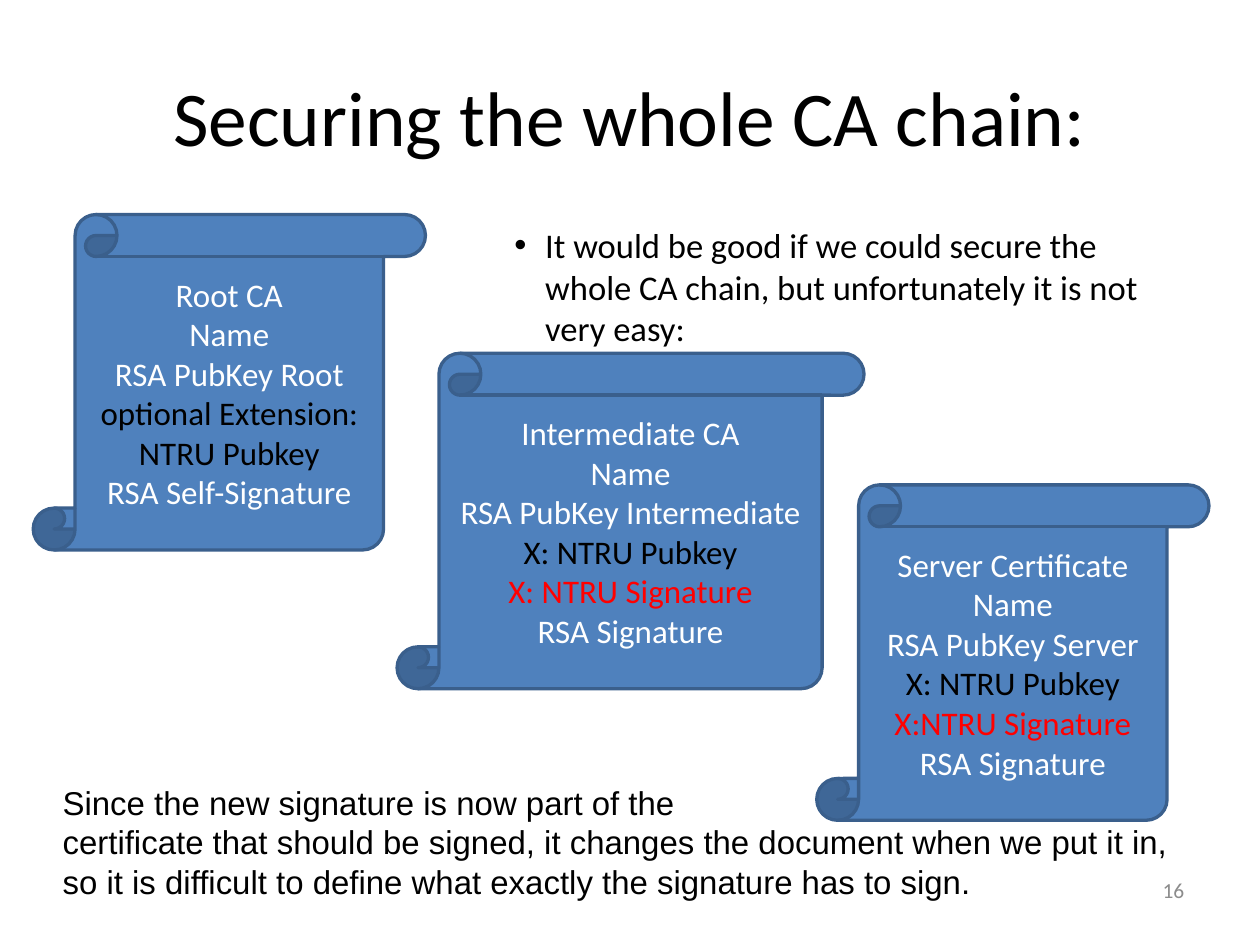
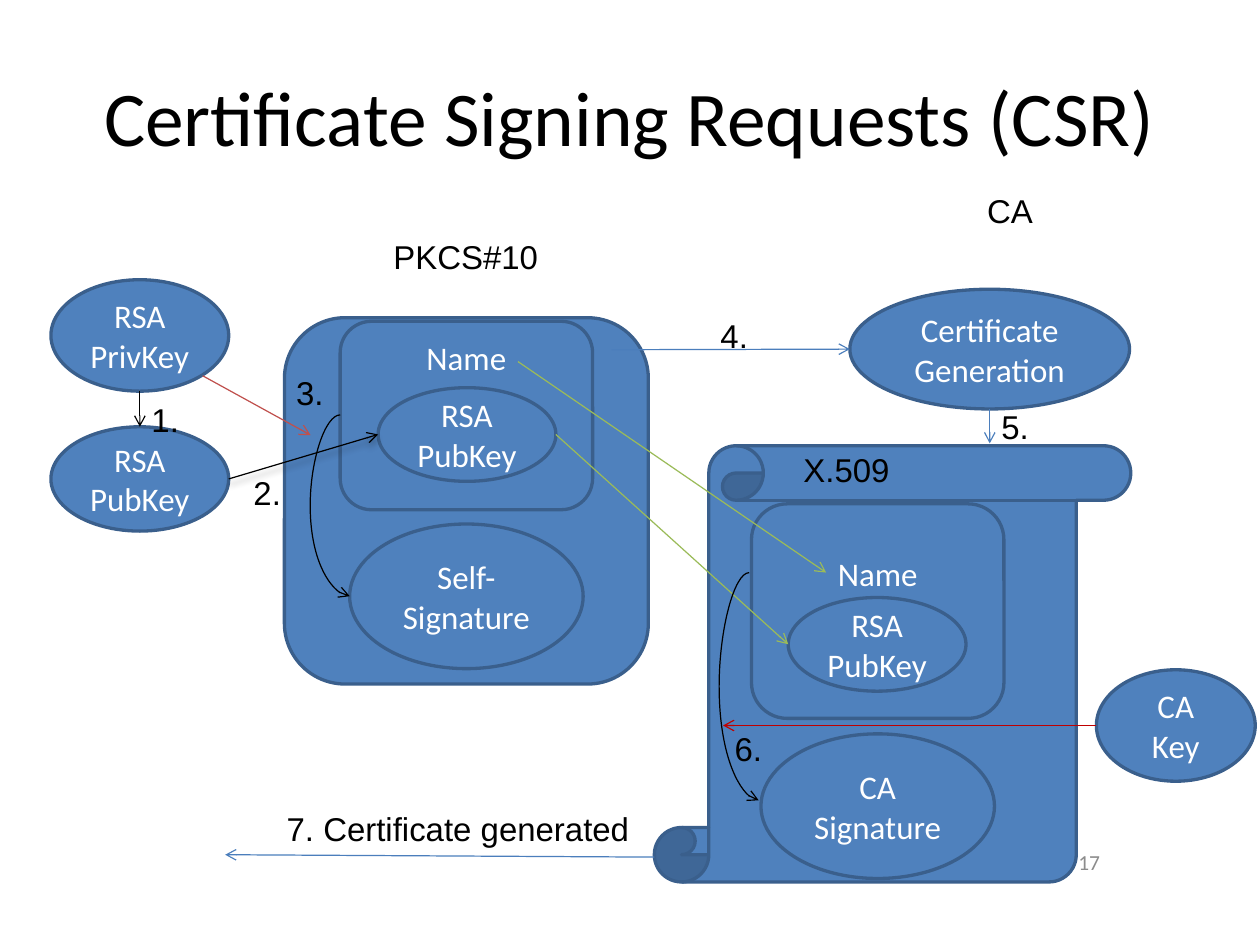
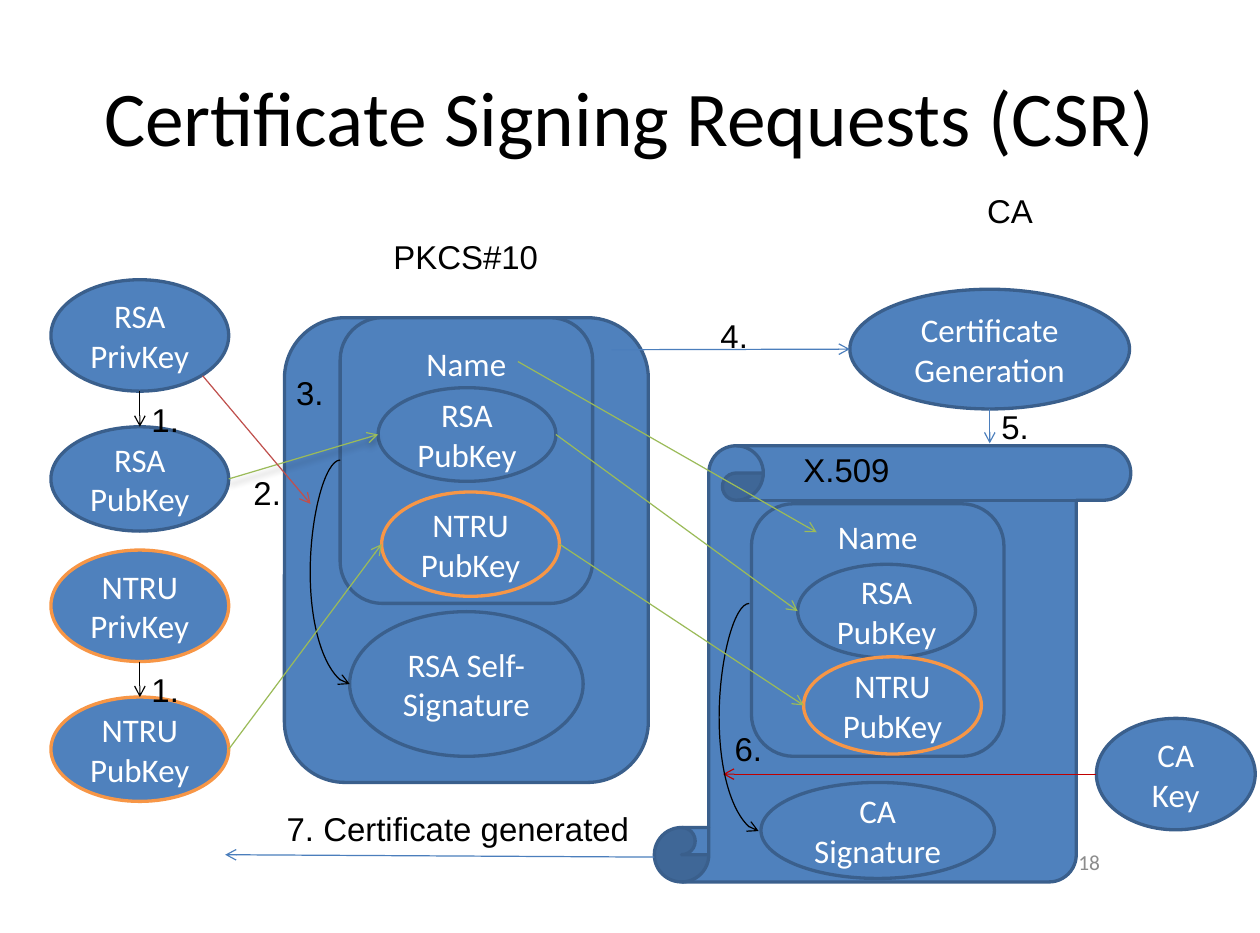
from dataclasses import dataclass
from typing import NamedTuple

from lxml.etree import SubElement
from pptx import Presentation
from pptx.dml.color import RGBColor
from pptx.enum.shapes import MSO_CONNECTOR, MSO_SHAPE
from pptx.enum.text import MSO_ANCHOR, MSO_AUTO_SIZE, PP_ALIGN
from pptx.oxml.ns import qn
from pptx.util import Inches, Pt

COLORS = {
    "black": "000000",
    "white": "FFFFFF",
    "red": "FF0000",
    "gray": "8C8C8C",
    "blue": "4F81BD",
    "blue outline": "3A5F8C",
    "blue line": "4B7EBC",
    "orange": "F79646",
    "green": "9BBB59",
    "brick": "C0504D",
    "dark red": "C00000",
}
TITLE_ONLY, TITLE_AND_BODY = 5, 1


class Point(NamedTuple):
    x: float
    y: float


class Box(NamedTuple):
    left: float
    top: float
    width: float
    height: float

    def at(self, across: float, down: float) -> Point:
        """Point at the given fractions of the width and height."""
        return Point(self.left + across * self.width, self.top + down * self.height)

    @property
    def left_mid(self) -> Point:
        return self.at(0, 0.5)

    @property
    def right_mid(self) -> Point:
        return self.at(1, 0.5)

    @property
    def top_mid(self) -> Point:
        return self.at(0.5, 0)

    @property
    def bottom_mid(self) -> Point:
        return self.at(0.5, 1)

    def emu(self) -> list[int]:
        return [Inches(value) for value in self]


class Line(NamedTuple):
    text: str
    color: str = "white"


class Label(NamedTuple):
    text: str
    left: float
    top: float
    width: float = 0.44


class Certificate(NamedTuple):
    box: Box
    lines: list[Line]


@dataclass
class CsrSlide:
    number: int
    request: Box
    request_info: Box
    request_name_gap: float
    self_signature: Box
    self_signature_text: str
    signing_end: Point
    request_loop_start: Point
    cert_info: Box
    cert_name_gap: float
    cert_key: Box
    cert_signature: Box
    cert_loop: tuple[Point, Point]
    ca_key: Box
    name_end: Point
    rsa_line: str
    with_ntru: bool = False


def rgb(name: str) -> RGBColor:
    return RGBColor.from_string(COLORS[name])


def write(frame, lines, *, font="Calibri", size=20, color="white",
          align=PP_ALIGN.CENTER, anchor=MSO_ANCHOR.MIDDLE, wrap=True,
          auto_size=MSO_AUTO_SIZE.NONE, side=0.1, top=0.05) -> None:
    """Fill a frame with one line or a list of Lines, one paragraph each."""
    if isinstance(lines, str):
        lines = [Line(lines, color)]
    frame.word_wrap = wrap
    frame.auto_size = auto_size
    frame.vertical_anchor = anchor
    frame.margin_left = frame.margin_right = Inches(side)
    frame.margin_top, frame.margin_bottom = Inches(top), Inches(0.05)
    for index, line in enumerate(lines):
        paragraph = frame.add_paragraph() if index else frame.paragraphs[0]
        paragraph.alignment = align
        run = paragraph.add_run()
        run.text = line.text
        run.font.name = font
        run.font.size = Pt(size)
        run.font.color.rgb = rgb(line.color)


def place(shape, box: Box) -> None:
    shape.left, shape.top, shape.width, shape.height = box.emu()


def add_node(slide, kind, box: Box, lines=(), outline="blue outline", **text_format) -> None:
    node = slide.shapes.add_shape(kind, *box.emu())
    node.shadow.inherit = False
    node.fill.solid()
    node.fill.fore_color.rgb = rgb("blue")
    node.line.color.rgb = rgb(outline)
    node.line.width = Pt(2)
    if lines:
        write(node.text_frame, lines, **text_format)


def add_ellipse(slide, box: Box, text: str, outline="blue outline") -> None:
    add_node(slide, MSO_SHAPE.OVAL, box, text, outline)


def add_name_panel(slide, box: Box, gap: float) -> None:
    add_node(slide, MSO_SHAPE.ROUNDED_RECTANGLE, box, "Name",
             anchor=MSO_ANCHOR.TOP, top=gap)


def add_label(slide, box: Box, lines) -> None:
    label = slide.shapes.add_textbox(*box.emu())
    write(label.text_frame, lines, font="Arial", color="black", align=PP_ALIGN.LEFT,
          anchor=MSO_ANCHOR.TOP, wrap=False, auto_size=MSO_AUTO_SIZE.SHAPE_TO_FIT_TEXT)


def add_arrow(slide, start: Point, end: Point, color: str,
              kind=MSO_CONNECTOR.STRAIGHT, shadow=False):
    arrow = slide.shapes.add_connector(
        kind, *(Inches(value) for value in (*start, *end)))
    arrow.line.color.rgb = rgb(color)
    arrow.line.width = Pt(0.75)
    properties = arrow.element.spPr
    SubElement(properties.find(qn("a:ln")), qn("a:tailEnd"), type="arrow")
    effects = SubElement(properties, qn("a:effectLst"))
    if shadow:
        outer = SubElement(effects, qn("a:outerShdw"), blurRad=str(Pt(4)),
                           dist=str(Pt(3)), dir="5400000", rotWithShape="0")
        tint = SubElement(outer, qn("a:srgbClr"), val=COLORS["black"])
        SubElement(tint, qn("a:alpha"), val="40000")
    return arrow


def add_loop(slide, start: Point, end: Point) -> None:
    """Curved arrow that bulges out to the left of both its ends."""
    loop = add_arrow(slide, start, end, "black", MSO_CONNECTOR.CURVE)
    properties = loop.element.spPr
    frame = properties.find(qn("a:xfrm"))
    for key, value in (("rot", "10800000"), ("flipH", "1"), ("flipV", "1")):
        frame.set(key, value)
    geometry = properties.find(qn("a:prstGeom"))
    adjustments = geometry.find(qn("a:avLst"))
    if adjustments is None:
        adjustments = SubElement(geometry, qn("a:avLst"))
    SubElement(adjustments, qn("a:gd"), name="adj1", fmla="val -317500")


def add_slide(deck, layout: int, title: str, number: int, number_box: Box):
    slide = deck.slides.add_slide(deck.slide_layouts[layout])
    place(slide.shapes.title, Box(0.53, 0.32, 9.57, 1.31))
    write(slide.shapes.title.text_frame, title, size=47, color="black", side=0.11)
    page_number = slide.shapes.add_textbox(*number_box.emu())
    write(page_number.text_frame, str(number), size=13, color="gray",
          align=PP_ALIGN.RIGHT, side=0.11)
    return slide


CERTIFICATES = [
    Certificate(Box(0.28, 1.81, 3.31, 2.83), [
        Line("Root CA"), Line("Name"), Line("RSA PubKey Root"),
        Line("optional Extension: NTRU Pubkey", "black"),
        Line("RSA Self-Signature")]),
    Certificate(Box(3.35, 2.98, 3.94, 2.83), [
        Line("Intermediate CA"), Line("Name"), Line("RSA PubKey Intermediate"),
        Line("X: NTRU Pubkey", "black"), Line("X: NTRU Signature", "red"),
        Line("RSA Signature")]),
    Certificate(Box(6.89, 4.09, 3.31, 2.83), [
        Line("Server Certificate"), Line("Name"), Line("RSA PubKey Server"),
        Line("X: NTRU Pubkey", "black"), Line("X:NTRU Signature", "red"),
        Line("RSA Signature")]),
]
CONCLUSION = [
    Line("Since the new signature is now part of the", "black"),
    Line("certificate that should be signed, it changes the document when we put it in,",
         "black"),
    Line("so it is difficult to define what exactly the signature has to sign.", "black"),
]


def build_chain_slide(deck) -> None:
    slide = add_slide(deck, TITLE_AND_BODY, "Securing the whole CA chain:", 16,
                      Box(7.62, 7.3, 2.48, 0.42))
    body = slide.placeholders[1]
    place(body, Box(0.53, 1.84, 9.57, 5.19))
    write(body.text_frame,
          "It would be good if we could secure the whole CA chain, "
          "but unfortunately it is not very easy:",
          size=21, color="black", align=PP_ALIGN.LEFT, anchor=MSO_ANCHOR.TOP, side=0.11)
    bullet = body.text_frame.paragraphs[0]
    bullet.space_before = Pt(4.2)
    settings = bullet._p.get_or_add_pPr()
    settings.set("marL", str(Inches(3.96)))
    settings.set("indent", str(Inches(-0.26)))
    SubElement(settings, qn("a:buFont"), typeface="Arial")
    SubElement(settings, qn("a:buChar"), char="•")
    for certificate in CERTIFICATES:
        add_node(slide, MSO_SHAPE.VERTICAL_SCROLL, certificate.box, certificate.lines)
    add_label(slide, Box(0.43, 6.55, 9.59, 1.11), CONCLUSION)


CSR_LABELS = [
    Label("PKCS#10", 3.22, 1.95, 1.44),
    Label("CA", 8.23, 1.56, 0.59),
    Label("X.509", 6.68, 3.74, 0.93),
    Label("2.", 2.04, 3.94),
    Label("3.", 2.4, 3.09),
    Label("4.", 5.98, 2.61),
    Label("5.", 8.35, 3.38),
    Label("6.", 6.1, 6.1),
    Label("7. Certificate generated", 2.32, 6.77, 3.11),
]
REQUEST_KEY = Box(3.19, 3.27, 1.5, 0.79)
GENERATION = Box(7.17, 2.44, 2.36, 1.01)

CSR_SLIDES = [
    CsrSlide(
        number=17,
        request=Box(2.4, 2.68, 3.07, 3.09),
        request_info=Box(2.87, 2.71, 2.13, 1.59),
        request_name_gap=0.06,
        self_signature=Box(2.95, 4.42, 1.97, 1.22),
        self_signature_text="Self-Signature",
        signing_end=Point(2.62, 3.67),
        request_loop_start=Point(2.87, 3.5),
        cert_info=Box(6.34, 4.25, 2.13, 1.81),
        cert_name_gap=0.33,
        cert_key=Box(6.65, 5.04, 1.5, 0.79),
        cert_signature=Box(6.42, 6.19, 1.97, 1.22),
        cert_loop=(Point(6.32, 4.83), Point(6.4, 6.75)),
        ca_key=Box(9.25, 5.65, 1.34, 0.94),
        name_end=Point(6.97, 4.83),
        rsa_line="black",
    ),
    CsrSlide(
        number=18,
        request=Box(2.4, 2.68, 3.07, 3.92),
        request_info=Box(2.87, 2.68, 2.13, 2.41),
        request_name_gap=0.11,
        self_signature=Box(2.95, 5.16, 1.97, 1.22),
        self_signature_text="RSA Self-Signature",
        signing_end=Point(2.62, 4.25),
        request_loop_start=Point(2.87, 3.88),
        cert_info=Box(6.34, 4.25, 2.13, 2.13),
        cert_name_gap=0,
        cert_key=Box(6.73, 4.76, 1.5, 0.79),
        cert_signature=Box(6.42, 6.6, 1.97, 0.81),
        cert_loop=(Point(6.32, 5.09), Point(6.4, 7.01)),
        ca_key=Box(9.25, 6.06, 1.34, 0.94),
        name_end=Point(6.89, 4.49),
        rsa_line="green",
        with_ntru=True,
    ),
]


def add_key_pair(slide, algorithm: str, top: float, outline="blue outline") -> Box:
    """Draw a private key above its public key; return the public key's box."""
    private = Box(0.43, top, 1.5, 0.94)
    public = Box(0.43, top + 1.24, 1.5, 0.88)
    add_ellipse(slide, private, f"{algorithm} PrivKey", outline)
    add_ellipse(slide, public, f"{algorithm} PubKey", outline)
    add_arrow(slide, private.bottom_mid, public.top_mid, "black")
    add_label(slide, Box(1.18, top + 0.96, 0.44, 0.44), "1.")
    return public


def add_ntru_keys(slide) -> None:
    public = add_key_pair(slide, "NTRU", 4.64, "orange")
    in_request = Box(3.22, 4.15, 1.5, 0.88)
    in_cert = Box(6.78, 5.54, 1.5, 0.82)
    for key in (in_request, in_cert):
        add_ellipse(slide, key, "NTRU PubKey", "orange")
    add_arrow(slide, public.right_mid, in_request.left_mid, "green")
    add_arrow(slide, in_request.right_mid, in_cert.left_mid, "green")


def build_csr_slide(deck, csr: CsrSlide) -> None:
    slide = add_slide(deck, TITLE_ONLY, "Certificate Signing Requests (CSR)",
                      csr.number, Box(6.91, 7.06, 2.48, 0.42))
    add_node(slide, MSO_SHAPE.VERTICAL_SCROLL, Box(5.52, 3.76, 4.02, 3.68))
    add_node(slide, MSO_SHAPE.ROUNDED_RECTANGLE, csr.request)
    add_name_panel(slide, csr.request_info, csr.request_name_gap)
    add_name_panel(slide, csr.cert_info, csr.cert_name_gap)
    for box, text in (
        (REQUEST_KEY, "RSA PubKey"),
        (csr.self_signature, csr.self_signature_text),
        (GENERATION, "Certificate Generation"),
        (csr.cert_key, "RSA PubKey"),
        (csr.cert_signature, "CA Signature"),
        (csr.ca_key, "CA Key"),
    ):
        add_ellipse(slide, box, text)
    rsa_public = add_key_pair(slide, "RSA", 2.36)

    add_arrow(slide, rsa_public.right_mid, REQUEST_KEY.left_mid, csr.rsa_line, shadow=True)
    signing_key = csr.ca_key.left_mid
    for start, end, color in (
        (Point(1.71, 3.17), csr.signing_end, "brick"),
        (Point(5.16, 2.95), GENERATION.left_mid, "blue line"),
        (GENERATION.bottom_mid, Point(8.35, 3.74), "blue line"),
        (signing_key, Point(6.1, signing_key.y), "dark red"),
        (Point(5.52, 7.23), Point(1.9, 7.21), "blue line"),
        (REQUEST_KEY.right_mid, csr.cert_key.left_mid, "green"),
        (Point(4.37, 3.05), csr.name_end, "green"),
    ):
        add_arrow(slide, start, end, color)
    add_loop(slide, csr.request_loop_start, csr.self_signature.left_mid)
    add_loop(slide, *csr.cert_loop)
    if csr.with_ntru:
        add_ntru_keys(slide)
    for label in CSR_LABELS:
        add_label(slide, Box(label.left, label.top, label.width, 0.44), label.text)


def main() -> None:
    deck = Presentation()
    deck.slide_width, deck.slide_height = Inches(10.63), Inches(7.87)
    build_chain_slide(deck)
    for csr in CSR_SLIDES:
        build_csr_slide(deck, csr)
    deck.save("out.pptx")


if __name__ == "__main__":
    main()
